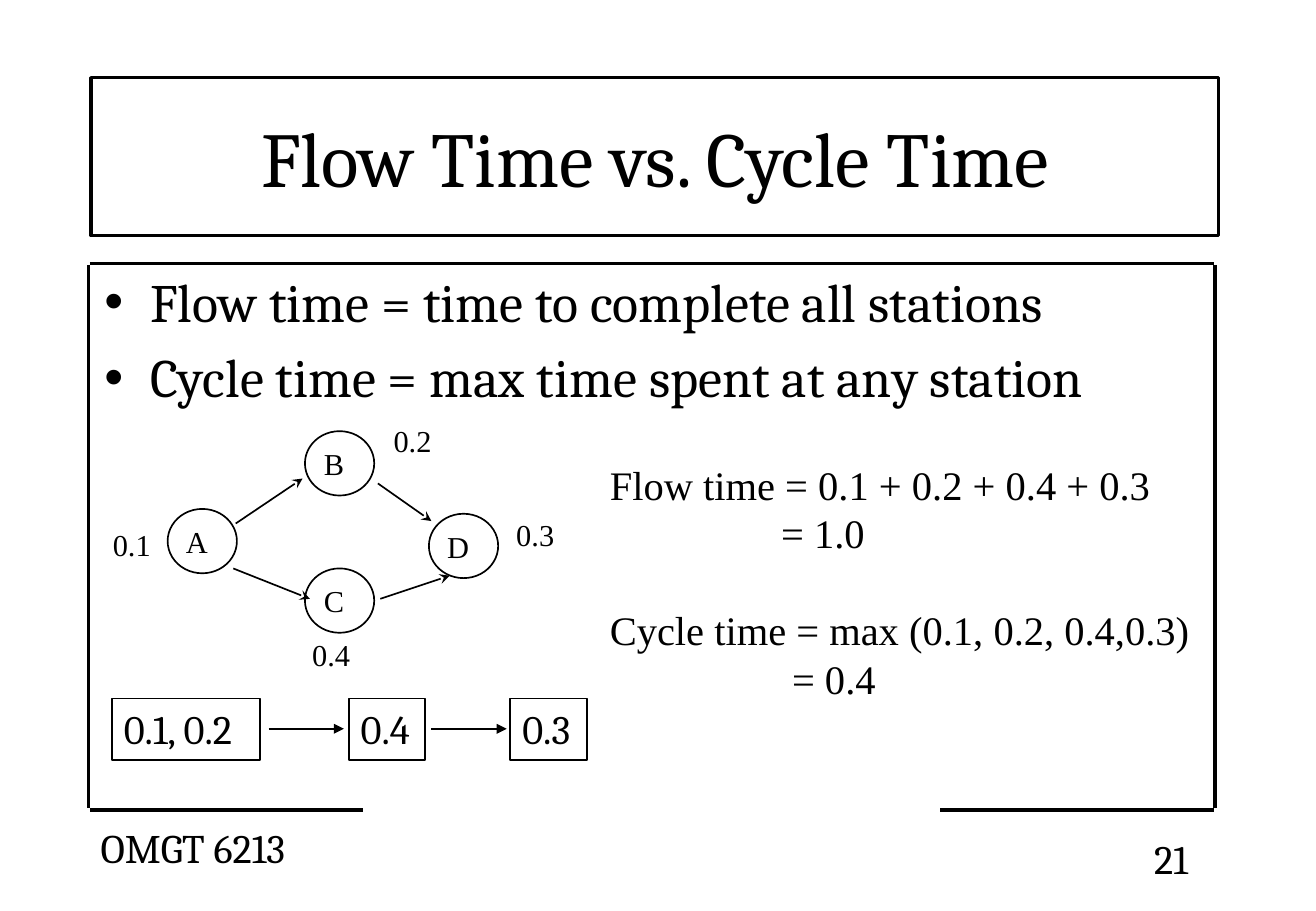
import pptx
import pptx.dml.color
import pptx.enum.shapes
import pptx.enum.text
import pptx.oxml.ns
import pptx.util
from dataclasses import dataclass
from lxml import etree

Inches = pptx.util.Inches
Pt = pptx.util.Pt
Shapes = pptx.enum.shapes.MSO_SHAPE
Align = pptx.enum.text.PP_ALIGN
Anchor = pptx.enum.text.MSO_ANCHOR
qn = pptx.oxml.ns.qn


@dataclass(frozen=True)
class Theme:
    ink: pptx.dml.color.RGBColor = pptx.dml.color.RGBColor(0, 0, 0)
    serif: str = "Cambria"
    diagram_font: str = "Times New Roman"
    title: int = 46
    body: int = 32
    text: int = 24
    label: int = 18
    frame_line: int = 2
    diagram_line: int = 1


theme = Theme()
presentation = pptx.Presentation()
presentation.slide_width = Inches(10.83)
presentation.slide_height = Inches(7.5)
slide = presentation.slides.add_slide(presentation.slide_layouts[6])


def add_text(text, left, top, width, height, geometry=None, size=theme.text,
             font=theme.serif, align=Align.LEFT, anchor=Anchor.TOP, wrap=False,
             line=theme.diagram_line, right_inset=0.1, bullet=False,
             indents=None, space_before=None, line_spacing=None):
    """Add a text box, or an outlined shape when a geometry is given."""
    place = [Inches(value) for value in (left, top, width, height)]
    if geometry is None:
        shape = slide.shapes.add_textbox(*place)
    else:
        shape = slide.shapes.add_shape(geometry, *place)
        shape.shadow.inherit = False
        shape.fill.background()
        shape.line.color.rgb = theme.ink
        shape.line.width = Pt(line)
    frame = shape.text_frame
    frame.word_wrap = wrap
    frame.vertical_anchor = anchor
    frame.margin_right = Inches(right_inset)
    for index, content in enumerate(text.split("\n")):
        paragraph = frame.paragraphs[0] if index == 0 else frame.add_paragraph()
        paragraph.text = content
        paragraph.alignment = align
        properties = paragraph._p.get_or_add_pPr()
        if line_spacing:
            paragraph.line_spacing = Pt(line_spacing)
        if space_before and index:
            paragraph.space_before = Pt(space_before[index])
        if indents:
            properties.set("marL", str(Inches(indents[index])))
        if bullet:
            properties.set("indent", str(-Inches(indents[index])))
            etree.SubElement(properties, qn("a:buFont"), typeface="Arial")
            etree.SubElement(properties, qn("a:buChar"), char="•")
        paragraph.font.size = Pt(size)
        paragraph.font.name = font
        paragraph.font.color.rgb = theme.ink
    return shape


def add_line(start, end, width=theme.diagram_line, arrowhead=None):
    connector = slide.shapes.add_connector(
        pptx.enum.shapes.MSO_CONNECTOR.STRAIGHT,
        *[Inches(value) for value in (*start, *end)])
    connector.line.color.rgb = theme.ink
    connector.line.width = Pt(width)
    if arrowhead:
        etree.SubElement(connector.line._get_or_add_ln(), qn("a:tailEnd"), type=arrowhead)
    etree.SubElement(connector._element.spPr, qn("a:effectLst"))


# Body frame, open at the bottom centre
for start, end in [
    ((0.74, 2.17), (9.99, 2.17)),
    ((0.73, 2.18), (0.73, 6.65)),
    ((10, 2.18), (10, 6.65)),
    ((0.74, 6.67), (2.99, 6.67)),
    ((7.74, 6.67), (9.99, 6.67)),
]:
    add_line(start, end, width=theme.frame_line)

# Footer
add_text("OMGT 6213", 0.73, 6.73, 1.94, 0.5)
add_text("21", 9.4, 6.82, 0.59, 0.5)

# Title and bullets
add_text("Flow Time vs. Cycle Time", 0.75, 0.64, 9.28, 1.3, geometry=Shapes.RECTANGLE,
         size=theme.title, align=Align.CENTER, anchor=Anchor.MIDDLE, wrap=True,
         line=theme.frame_line)
add_text("Flow time = time to complete all stations\n"
         "Cycle time = max time spent at any station",
         0.76, 2.16, 9.31, 1.4, size=theme.body, wrap=True, bullet=True,
         indents=(0.38, 0.38), space_before=(0, 6.4))

# Calculations
add_text("Flow time = 0.1 + 0.2 + 0.4 + 0.3\n= 1.0\n"
         "Cycle time = max (0.1, 0.2, 0.4,0.3)\n= 0.4",
         4.92, 3.74, 5, 2.09, font=theme.diagram_font, wrap=True,
         indents=(0, 1.41, 0, 1.5), space_before=(0, 0, 28.7, 0), line_spacing=28.7)

# Station network: name, node corner, time, time label corner
for name, node, time, label in [
    ("A", (1.38, 4.19), "0.1", (0.83, 4.28)),
    ("B", (2.51, 3.55), "0.2", (3.14, 3.43)),
    ("C", (2.51, 4.68), "0.4", (2.47, 5.19)),
    ("D", (3.53, 4.23), "0.3", (4.15, 4.2)),
]:
    station = add_text(name, *node, 0.57, 0.53, geometry=Shapes.OVAL, size=theme.label,
                       font=theme.diagram_font, align=Align.CENTER,
                       anchor=Anchor.MIDDLE, right_inset=0.09)
    station.text_frame.margin_left = 0
    add_text(time, *label, 0.51, 0.4, size=theme.label, font=theme.diagram_font)

for start, end in [
    ((1.94, 4.31), (2.49, 3.94)),
    ((1.92, 4.68), (2.55, 4.93)),
    ((3.11, 3.98), (3.55, 4.29)),
    ((3.13, 4.93), (3.7, 4.74)),
]:
    add_line(start, end, arrowhead="stealth")

# Grouped stations in sequence
for times, left, width in [("0.1, 0.2", 0.92, 1.22), ("0.4", 2.87, 0.63), ("0.3", 4.2, 0.63)]:
    add_text(times, left, 5.75, width, 0.51, geometry=Shapes.RECTANGLE)
for left in (2.21, 3.55):
    add_line((left, 6), (left + 0.62, 6), arrowhead="triangle")

presentation.save("out.pptx")
